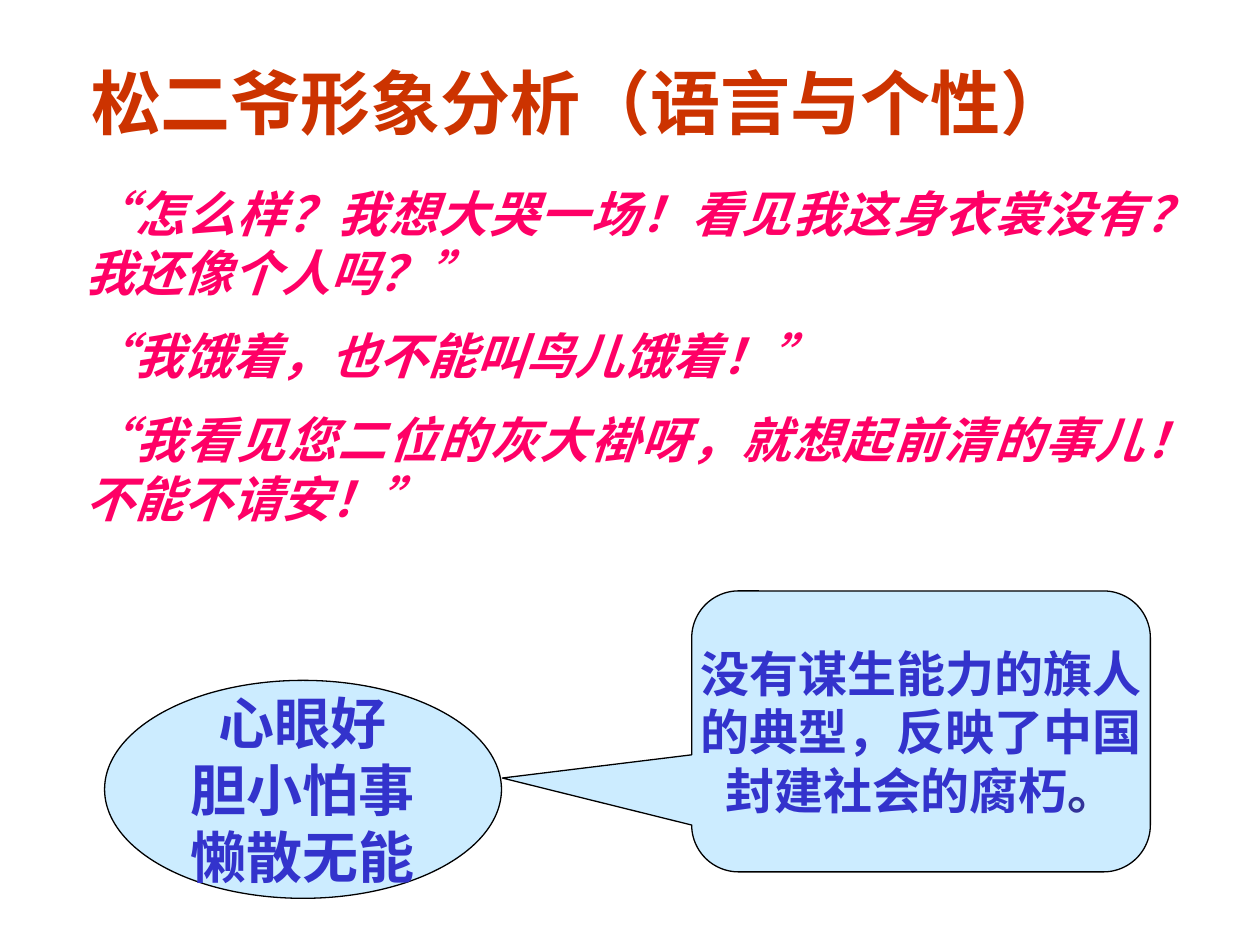
from lxml.etree import SubElement
from pptx import Presentation
from pptx.dml.color import RGBColor as RGB
from pptx.enum.shapes import MSO_SHAPE as Preset
from pptx.enum.text import MSO_ANCHOR as Anchor, MSO_AUTO_SIZE as AutoSize, PP_ALIGN as Align
from pptx.oxml.ns import qn
from pptx.util import Inches, Pt

COLORS = {"title": "CC3300", "quote": "FF0066", "trait": "3333CC", "stop": "333399",
          "bubble": "CCECFF", "outline": "000000"}
SERIF, HAN, HAN_JP = "Times New Roman", "Noto Sans CJK SC", "Noto Sans CJK JP"

prs = Presentation()
prs.slide_width, prs.slide_height = Inches(10), Inches(7.5)
slide = prs.slides.add_slide(prs.slide_layouts[6])


def add_run(paragraph, words, size, color, font=SERIF, bold=True, italic=False):
    run = paragraph.add_run()
    run.text = words
    run.font.name, run.font.size = font, Pt(size)
    run.font.bold, run.font.italic = bold, italic
    run.font.color.rgb = RGB.from_string(COLORS[color])
    east_asian = HAN if font == SERIF else font
    SubElement(run.font._element, qn("a:ea")).set("typeface", east_asian)


def next_paragraph(frame, index, align):
    paragraph = frame.add_paragraph() if index else frame.paragraphs[0]
    paragraph.alignment = align
    return paragraph


quotes = slide.shapes.add_textbox(Inches(0.58), Inches(1.41), Inches(9), Inches(2.9)).text_frame
quotes.word_wrap, quotes.auto_size = True, AutoSize.SHAPE_TO_FIT_TEXT
for index, speech in enumerate(["怎么样？我想大哭一场！看见我这身衣裳没有？我还像个人吗？",
                                "我饿着，也不能叫鸟儿饿着！",
                                "我看见您二位的灰大褂呀，就想起前清的事儿！不能不请安！"]):
    paragraph = next_paragraph(quotes, index, Align.JUSTIFY)
    if index:
        paragraph.space_before = Pt(14)
    for words, font in [("“", HAN), (speech, SERIF), ("”", HAN)]:
        add_run(paragraph, words, 28, "quote", font, italic=True)

title = slide.shapes.add_textbox(Inches(0.5), Inches(0.42), Inches(8.33), Inches(0.77)).text_frame
title.word_wrap, title.auto_size = True, AutoSize.SHAPE_TO_FIT_TEXT
add_run(title.paragraphs[0], " ", 40, "outline", HAN_JP, bold=False)
add_run(title.paragraphs[0], "松二爷形象分析（语言与个性）", 40, "title", HAN_JP)

bubbles = [
    (Preset.OVAL, (0.83, 5.4, 3.15, 1.73), [], 32,
     [[("心眼好", "trait")], [("胆小怕事", "trait")], [("懒散无能", "trait")]]),
    (Preset.ROUNDED_RECTANGULAR_CALLOUT, (5.49, 4.69, 3.64, 2.23), [-0.913, 0.166, 0.167], 28,
     [[("没有谋生能力的旗人", "trait")], [("的典型，反映了中国", "trait")],
      [("封建社会的腐朽", "trait"), ("。", "stop")]]),
]
for preset, place, adjustments, size, lines in bubbles:
    bubble = slide.shapes.add_shape(preset, *map(Inches, place))
    for index, value in enumerate(adjustments):
        bubble.adjustments[index] = value
    bubble.shadow.inherit = False
    bubble.fill.solid()
    bubble.fill.fore_color.rgb = RGB.from_string(COLORS["bubble"])
    bubble.line.color.rgb = RGB.from_string(COLORS["outline"])
    bubble.line.width = Pt(0.75)
    frame = bubble.text_frame
    frame.word_wrap, frame.vertical_anchor = False, Anchor.MIDDLE
    for index, pieces in enumerate(lines):
        paragraph = next_paragraph(frame, index, Align.CENTER)
        for words, color in pieces:
            add_run(paragraph, words, size, color)

prs.save("out.pptx")
